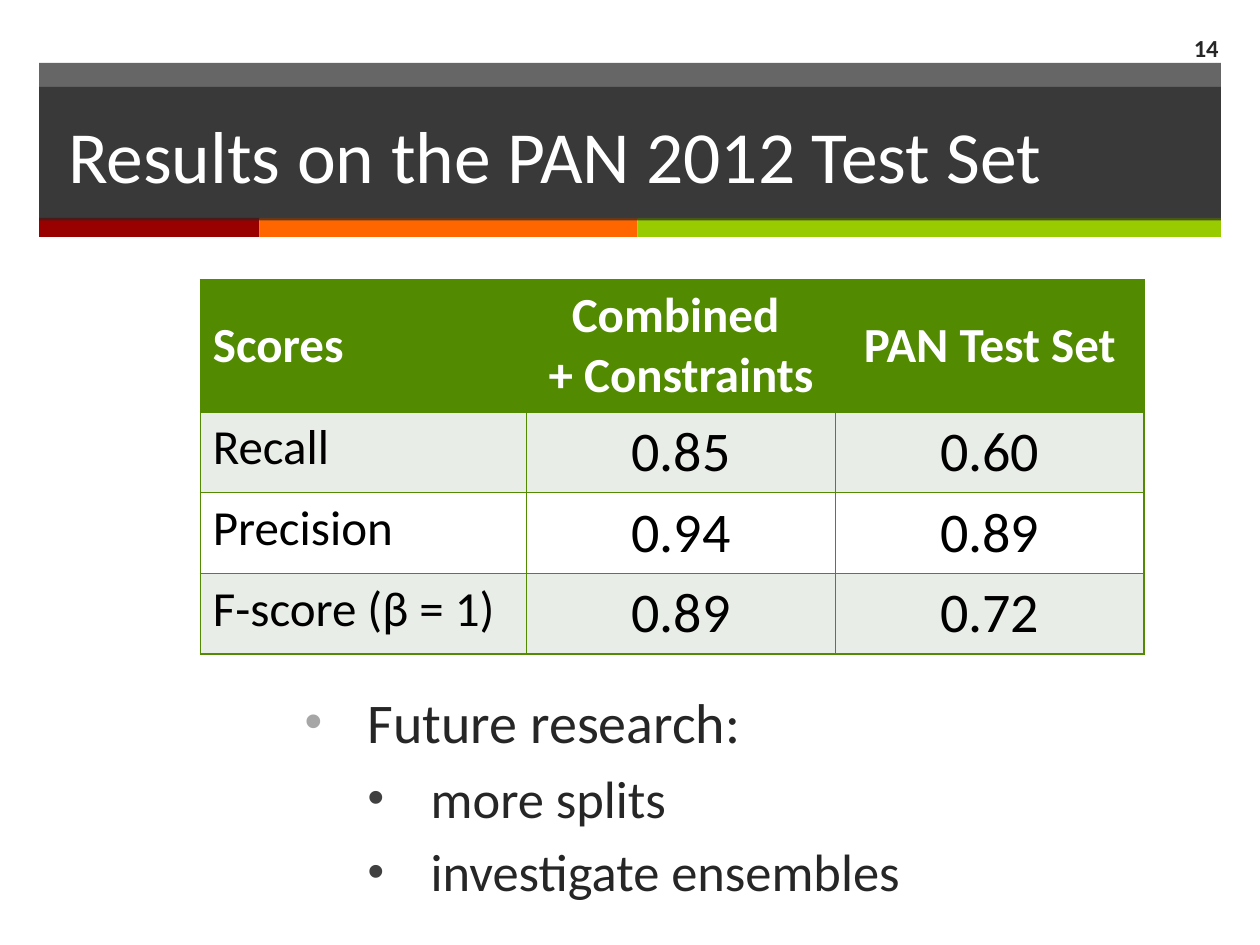
from dataclasses import dataclass

from lxml import etree
from pptx import Presentation
from pptx.dml.color import RGBColor
from pptx.enum.shapes import MSO_SHAPE
from pptx.enum.text import MSO_ANCHOR, PP_ALIGN
from pptx.oxml.ns import qn
from pptx.util import Inches, Pt

RECTANGLE = MSO_SHAPE.RECTANGLE
MIDDLE, TOP = MSO_ANCHOR.MIDDLE, MSO_ANCHOR.TOP
LEFT, CENTER, RIGHT = PP_ALIGN.LEFT, PP_ALIGN.CENTER, PP_ALIGN.RIGHT


@dataclass(frozen=True)
class Theme:
    font: str = "Calibri"
    dark: str = "262626"
    white: str = "FFFFFF"
    black: str = "000000"
    red: str = "990000"
    orange: str = "FF6600"
    lime: str = "99CC00"
    green: str = "528A02"
    band: str = "E9EDE7"
    bullet_colors: tuple = ("A6A6A6", "404040")
    bullet_sizes: tuple = (32, 30)
    bullet_gaps: tuple = (20, 6)
    title_size: int = 42
    label_size: int = 28
    value_size: int = 32
    number_size: int = 14


def add_xml(parent, tag, **attributes):
    return etree.SubElement(parent, qn(tag), attributes)


class SlideBuilder:
    def __init__(self, slide, theme):
        self.slide = slide
        self.theme = theme

    def style(self, para, size, color, bold=False, align=LEFT):
        para.alignment = align
        for span in para.runs:
            span.font.name = self.theme.font
            span.font.size = Pt(size)
            span.font.bold = bold
            span.font.color.rgb = RGBColor.from_string(color)

    def bar(self, left, top, width, height, color, opacity=100):
        shape = self.slide.shapes.add_shape(
            RECTANGLE, Inches(left), Inches(top), Inches(width), Inches(height))
        shape.shadow.inherit = False
        shape.line.fill.background()
        shape.fill.solid()
        shape.fill.fore_color.rgb = RGBColor.from_string(color)
        if opacity < 100:
            fill_color = shape.fill._xPr.find(qn("a:solidFill"))[0]
            add_xml(fill_color, "a:alpha", val=str(opacity * 1000))
        return shape

    def title(self, bar, text):
        frame = bar.text_frame
        frame.word_wrap = True
        frame.vertical_anchor = MIDDLE
        frame.margin_left = Inches(0.23)
        frame.text = text
        self.style(frame.paragraphs[0], self.theme.title_size, self.theme.white)

    def text_box(self, left, top, width, height, text, anchor=TOP):
        box = self.slide.shapes.add_textbox(
            Inches(left), Inches(top), Inches(width), Inches(height))
        frame = box.text_frame
        frame.word_wrap = True
        frame.vertical_anchor = anchor
        frame.text = text
        return frame

    def page_number(self, left, top, width, height, text):
        frame = self.text_box(left, top, width, height, text, MIDDLE)
        self.style(frame.paragraphs[0], self.theme.number_size, self.theme.dark,
                   bold=True, align=RIGHT)

    def bullets(self, left, top, width, height, items):
        text = "\n".join(item for _, item in items)
        frame = self.text_box(left, top, width, height, text)
        for para, (level, _) in zip(frame.paragraphs, items):
            self.style(para, self.theme.bullet_sizes[level], self.theme.dark)
            para.level = level
            para.space_before = Pt(self.theme.bullet_gaps[level])
            properties = para._p.get_or_add_pPr()
            properties.set("marL", str(Inches(0.5 * (level + 1))))
            properties.set("indent", str(Inches(-0.5)))
            color = add_xml(properties, "a:buClr")
            add_xml(color, "a:srgbClr", val=self.theme.bullet_colors[level])
            add_xml(properties, "a:buSzPct", val="90000")
            add_xml(properties, "a:buFont", typeface="Arial")
            add_xml(properties, "a:buChar", char="•")

    def cell_borders(self, cell, color):
        properties = cell._tc.get_or_add_tcPr()
        for side in ("a:lnL", "a:lnR", "a:lnT", "a:lnB"):
            line = add_xml(properties, side, w=str(Pt(1)))
            fill = add_xml(line, "a:solidFill")
            add_xml(fill, "a:srgbClr", val=color)

    def table(self, left, top, widths, heights, rows):
        theme = self.theme
        table = self.slide.shapes.add_table(
            len(rows), len(widths), Inches(left), Inches(top),
            Inches(sum(widths)), Inches(sum(heights))).table
        table.horz_banding = False
        for column, width in zip(table.columns, widths):
            column.width = Inches(width)
        for row, height in zip(table.rows, heights):
            row.height = Inches(height)
        for i, values in enumerate(rows):
            header = i == 0
            band = theme.band if i % 2 else theme.white
            for j, value in enumerate(values):
                cell = table.cell(i, j)
                cell.text_frame.text = value
                cell.vertical_anchor = MIDDLE if header else TOP
                label = header or j == 0
                self.style(cell.text_frame.paragraphs[0],
                           theme.label_size if label else theme.value_size,
                           theme.white if header else theme.black,
                           bold=header, align=CENTER if j else LEFT)
                self.cell_borders(cell, theme.green)
                cell.fill.solid()
                cell.fill.fore_color.rgb = RGBColor.from_string(
                    theme.green if header else band)


def main():
    deck = Presentation()
    deck.slide_width, deck.slide_height = Inches(10), Inches(7.5)
    theme = Theme()
    page = SlideBuilder(deck.slides.add_slide(deck.slide_layouts[6]), theme)

    # Header band with the coloured stripe
    page.bar(0.31, 0.5, 9.38, 1.24, theme.dark, opacity=70)
    stripe_left = 0.31
    for width, color in ((1.75, theme.red), (3, theme.orange), (4.63, theme.lime)):
        page.bar(stripe_left, 1.73, width, 0.15, color)
        stripe_left += width

    # Title and page number
    title_bar = page.bar(0.31, 0.69, 9.38, 1.06, theme.dark, opacity=70)
    page.title(title_bar, "Results on the PAN 2012 Test Set")
    page.page_number(9.08, 0.18, 0.69, 0.39, "14")

    # Scores
    page.table(1.59, 2.22, (2.59, 2.45, 2.45), (1.05, 0.64, 0.64, 0.64), (
        ("Scores", "Combined \v+ Constraints", "PAN Test Set"),
        ("Recall", "0.85", "0.60"),
        ("Precision", "0.94", "0.89"),
        ("F-score (β = 1)", "0.89", "0.72"),
    ))

    # Outlook
    page.bullets(2.32, 5.41, 6.72, 1.91, (
        (0, "Future research:"),
        (1, "more splits"),
        (1, "investigate ensembles"),
    ))

    deck.save("out.pptx")


if __name__ == "__main__":
    main()
